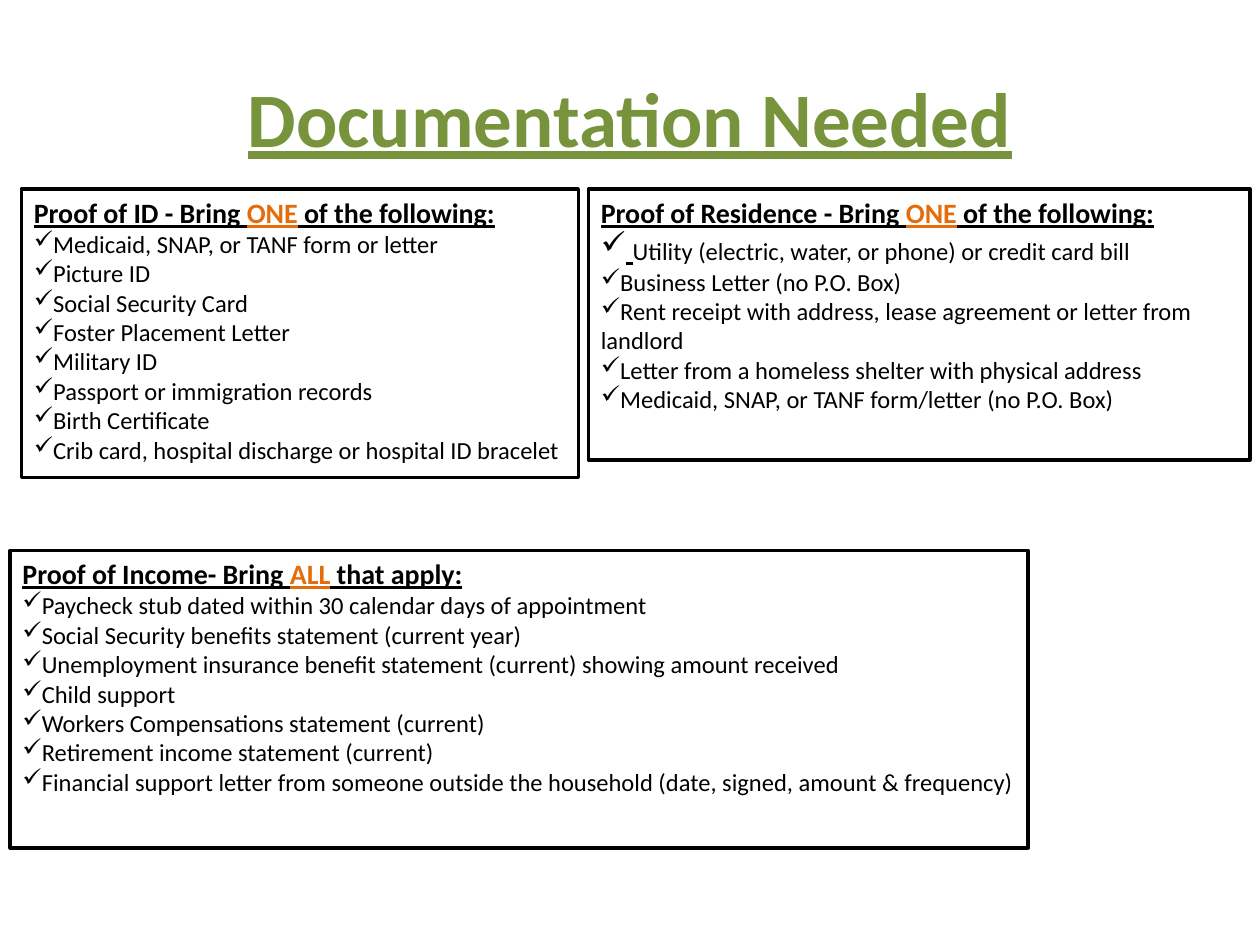
from lxml.etree import SubElement
from pptx import Presentation
from pptx.dml.color import RGBColor
from pptx.enum.shapes import MSO_SHAPE
from pptx.enum.text import MSO_ANCHOR, PP_ALIGN
from pptx.oxml.ns import qn
from pptx.util import Inches, Pt

GREEN = RGBColor(0x77, 0x93, 0x3C)
ORANGE = RGBColor(0xE4, 0x6C, 0x0A)
BLACK = RGBColor(0, 0, 0)
WHITE = RGBColor(255, 255, 255)
FONT = "Calibri"
TITLE = "Documentation Needed"
UPPER_ROW, LOWER_ROW = 1.5, 4.37

BOXES = [
    {
        "area": (0.17, UPPER_ROW, 4.42, 2.29),
        "heading": ("Proof of ID - Bring ", "ONE", " of the following:"),
        "items": [
            "Medicaid, SNAP, or TANF form or letter",
            "Picture ID",
            "Social Security Card",
            "Foster Placement Letter",
            "Military ID",
            "Passport or immigration records",
            "Birth Certificate",
            "Crib card, hospital discharge or hospital ID bracelet",
        ],
    },
    {
        "area": (0.08, LOWER_ROW, 8.08, 2.36),
        "heading": ("Proof of Income- Bring ", "ALL", " that apply:"),
        "items": [
            "Paycheck stub dated within 30 calendar days of appointment",
            "Social Security benefits statement (current year)",
            "Unemployment insurance benefit statement (current) showing amount received",
            "Child support",
            "Workers Compensations statement (current)",
            "Retirement income statement (current)",
            "Financial support letter from someone outside the household (date, signed, amount & frequency)",
        ],
    },
    {
        "area": (4.67, UPPER_ROW, 5.25, 2.15),
        "heading": ("Proof of Residence - Bring ", "ONE", " of the following:"),
        "items": [
            " Utility (electric, water, or phone) or credit card bill",
            "Business Letter (no P.O. Box)",
            "Rent receipt with address, lease agreement or letter from landlord",
            "Letter from a homeless shelter with physical address",
            "Medicaid, SNAP, or TANF form/letter (no P.O. Box)",
        ],
    },
]


def add_run(paragraph, text, size, color=BLACK, strong=False):
    run = paragraph.add_run()
    run.text = text
    run.font.name = FONT
    run.font.size = Pt(size)
    run.font.color.rgb = color
    run.font.bold = strong
    run.font.underline = strong


def add_check_item(text_frame, text):
    paragraph = text_frame.add_paragraph()
    paragraph.alignment = PP_ALIGN.LEFT
    properties = paragraph._p.get_or_add_pPr()
    SubElement(properties, qn("a:buChar")).set("char", "✓")
    label = text.lstrip()
    if label != text:
        add_run(paragraph, " ", 18, strong=True)
    add_run(paragraph, label, 14)


def add_box(slide, area, heading, items):
    shape = slide.shapes.add_shape(MSO_SHAPE.RECTANGLE, *map(Inches, area))
    shape.shadow.inherit = False
    shape.fill.solid()
    shape.fill.fore_color.rgb = WHITE
    shape.line.color.rgb = BLACK
    shape.line.width = Pt(2)
    text_frame = shape.text_frame
    text_frame.word_wrap = True
    text_frame.vertical_anchor = MSO_ANCHOR.TOP
    paragraph = text_frame.paragraphs[0]
    paragraph.alignment = PP_ALIGN.LEFT
    for text, color in zip(heading, (BLACK, ORANGE, BLACK)):
        add_run(paragraph, text, 16, color, strong=True)
    for item in items:
        add_check_item(text_frame, item)


def add_title(slide):
    area = map(Inches, (0.5, 0.3, 9, 1.25))
    text_frame = slide.shapes.add_textbox(*area).text_frame
    text_frame.word_wrap = True
    text_frame.vertical_anchor = MSO_ANCHOR.MIDDLE
    paragraph = text_frame.paragraphs[0]
    paragraph.alignment = PP_ALIGN.CENTER
    add_run(paragraph, TITLE, 44, GREEN, strong=True)


def main():
    presentation = Presentation()
    presentation.slide_width = Inches(10)
    presentation.slide_height = Inches(7.5)
    slide = presentation.slides.add_slide(presentation.slide_layouts[6])
    add_title(slide)
    for box in BOXES:
        add_box(slide, **box)
    presentation.save("out.pptx")


if __name__ == "__main__":
    main()
